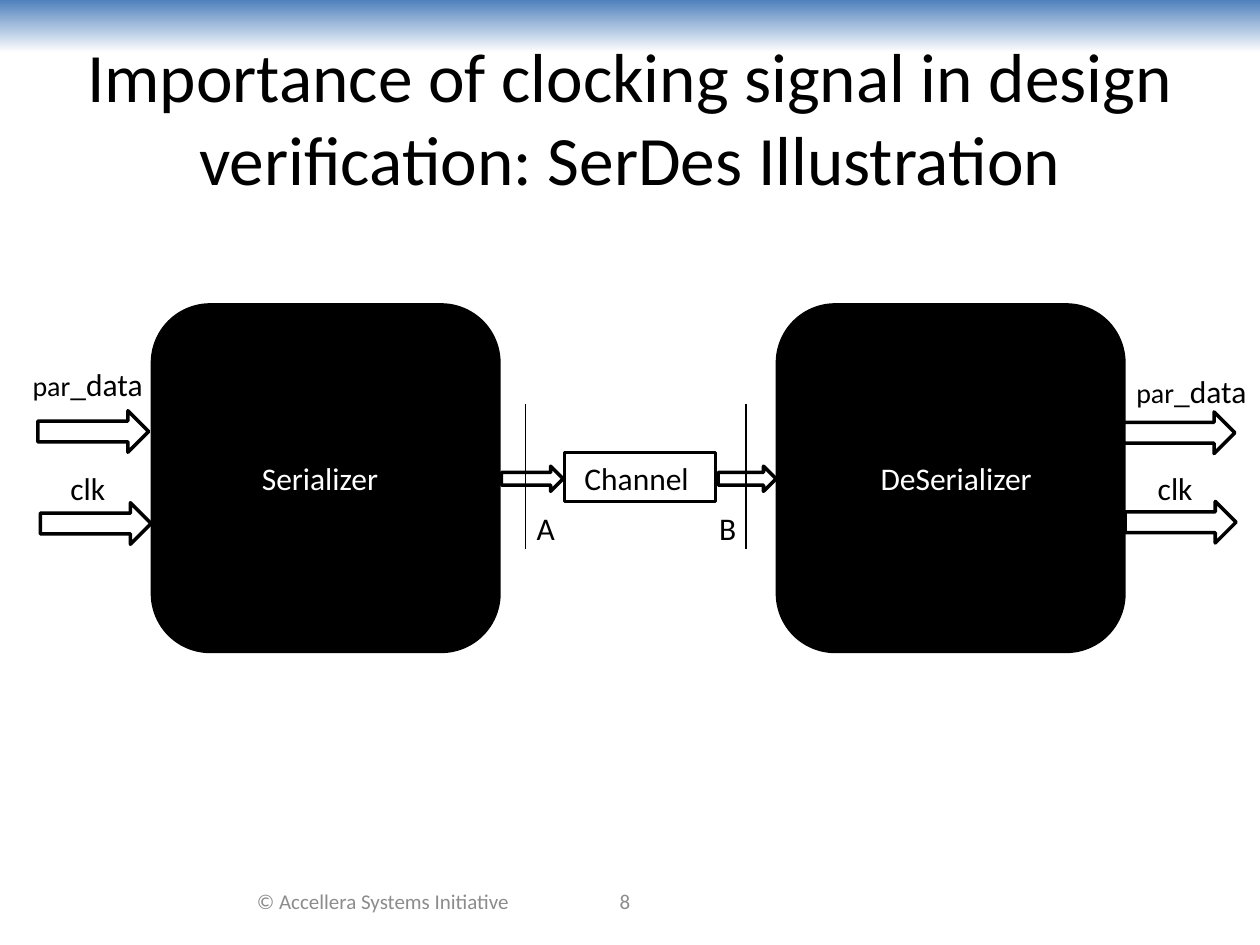
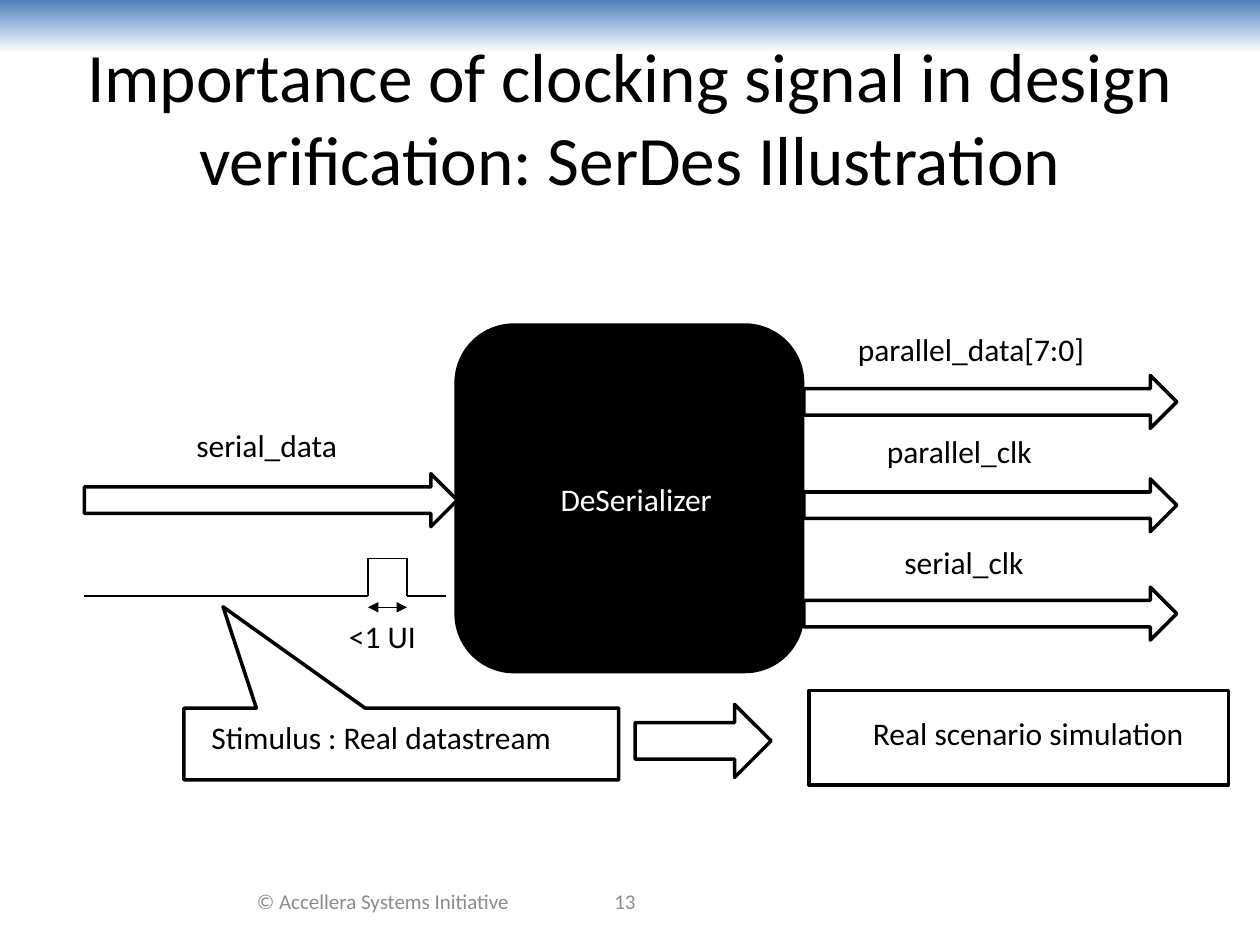
from dataclasses import dataclass
from itertools import pairwise
from typing import Any

from lxml import etree
from pptx import Presentation
from pptx import util as u
from pptx.dml.color import RGBColor
from pptx.enum import shapes, text
from pptx.oxml import ns

# Shared style
BLACK = RGBColor(0x00, 0x00, 0x00)
WHITE = RGBColor(0xFF, 0xFF, 0xFF)
BLUE = RGBColor(0x4F, 0x81, 0xBD)
GREY = RGBColor(0x8C, 0x8C, 0x8C)
FONT = "Calibri"
TITLE = "Importance of clocking signal in design verification: SerDes Illustration"
FOOTER = "© Accellera Systems Initiative"

# Grid: 100 columns by 75 rows
WIDTH, HEIGHT = u.Inches(10), u.Inches(7.5)
COLS, ROWS = 100, 75
SIDE = 27.5  # side of a black block
TALL = 4  # height of a label

RECT = shapes.MSO_SHAPE.RECTANGLE
ROUND = shapes.MSO_SHAPE.ROUNDED_RECTANGLE
ARROW = shapes.MSO_SHAPE.RIGHT_ARROW
CALL = shapes.MSO_SHAPE.RECTANGULAR_CALLOUT


@dataclass
class Form:
    kind: Any
    col: float
    row: float
    wide: float
    high: float
    fill: RGBColor = WHITE
    adj: tuple[float, ...] = ()


@dataclass
class Label:
    runs: str | list[tuple[str, float]]
    col: float
    row: float
    wide: float
    high: float = TALL
    size: float = 18
    color: RGBColor = BLACK
    mid: bool = False


@dataclass
class Rule:
    start: tuple[float, float]
    end: tuple[float, float]
    heads: bool = False


def col_x(col: float) -> int:
    return round(WIDTH * col / COLS)


def row_y(row: float) -> int:
    return round(HEIGHT * row / ROWS)


def format_all(item: Any, values: dict[str, Any]) -> None:
    for name, value in values.items():
        setattr(item, name, value)


def place(item: Form | Label) -> tuple[int, int, int, int]:
    return col_x(item.col), row_y(item.row), col_x(item.wide), row_y(item.high)


def draw_form(tree: Any, form: Form) -> Any:
    shape = tree.add_shape(form.kind, *place(form))
    shape.shadow.inherit = False
    shape.fill.solid()
    shape.fill.fore_color.rgb = form.fill
    shape.line.color.rgb = BLACK
    shape.line.width = u.Pt(2)
    for i, value in enumerate(form.adj):
        shape.adjustments[i] = value
    return shape


def draw_label(tree: Any, label: Label) -> None:
    frame = tree.add_textbox(*place(label)).text_frame
    anchor = text.MSO_ANCHOR.MIDDLE if label.mid else text.MSO_ANCHOR.TOP
    format_all(frame, {"word_wrap": True, "vertical_anchor": anchor})
    para = frame.paragraphs[0]
    para.alignment = text.PP_ALIGN.CENTER if label.mid else text.PP_ALIGN.LEFT
    runs = [(label.runs, label.size)] if isinstance(label.runs, str) else label.runs
    for words, size in runs:
        run = para.add_run()
        run.text = words
        format_all(run.font, {"name": FONT, "size": u.Pt(size)})
        run.font.color.rgb = label.color


def draw_rule(tree: Any, rule: Rule) -> None:
    (x1, y1), (x2, y2) = rule.start, rule.end
    line = tree.add_connector(
        shapes.MSO_CONNECTOR.STRAIGHT, col_x(x1), row_y(y1), col_x(x2), row_y(y2))
    line.line.color.rgb = BLACK
    line.line.width = u.Pt(0.75)
    props = line._element.spPr
    if rule.heads:
        for end in ("a:headEnd", "a:tailEnd"):
            etree.SubElement(props.find(ns.qn("a:ln")), ns.qn(end), type="triangle")
    etree.SubElement(props, ns.qn("a:effectLst"))


def draw_all(tree: Any, items: list[Form | Label | Rule]) -> None:
    tools = {Form: draw_form, Label: draw_label, Rule: draw_rule}
    for item in items:
        tools[type(item)](tree, item)


def add_page(deck: Any, number: int) -> Any:
    """Add a slide with the band, title and footer."""
    tree = deck.slides.add_slide(deck.slide_layouts[6]).shapes
    band = draw_form(tree, Form(RECT, 0, 0, COLS, 4.2))
    band.line.fill.background()
    band.fill.gradient()
    band.fill.gradient_angle = 270
    for stop, color, spot in zip(band.fill.gradient_stops, (BLUE, WHITE), (0, 1)):
        stop.color.rgb = color
        stop.position = spot
    draw_all(tree, [
        Label(TITLE, 5, 3, 90, 12.5, 39.6, mid=True),
        Label(FOOTER, 18.3, 69.5, 24.2, TALL, 12, GREY, True),
        Label(str(number), 40, 69.5, 19.2, TALL, 12, GREY, True),
    ])
    return tree


def link_page(deck: Any) -> None:
    """Serializer, channel and deserializer."""
    tree = add_page(deck, 8)
    # Blocks
    for name, col, left, wide in (("Serializer", 12.1, 19.8, 12.1),
                                  ("DeSerializer", 61.7, 68.9, 14.8)):
        draw_all(tree, [Form(ROUND, col, 24.2, SIDE, SIDE, BLACK),
                        Label(name, left, 35.9, wide, color=WHITE)])
    # Ports
    data = [("par", 16), ("_data", 18)]
    for runs, left, top, wide, col, row in (
            (data, 1.6, 28.5, 10.8, 3, 32.6), ("clk", 4.6, 36.7, 5.4, 3.2, 39.9),
            (data, 89.2, 29, 10.8, 89.2, 32.7), ("clk", 90.9, 36.7, 5.4, 89.3, 39.8)):
        draw_all(tree, [Form(ARROW, col, row, 8.8, 3.3), Label(runs, left, top, wide)])
    # Channel
    draw_all(tree, [
        Form(RECT, 44.8, 35.9, 12, 3.9),
        Label("Channel", 45.4, 35.9, 10.4),
        Form(ARROW, 39.8, 37, 4.9, 2),
        Form(ARROW, 57, 37, 4.6, 2),
    ])
    # Probe points
    for name, col, left in (("A", 41.7, 41.6), ("B", 59.2, 56.1)):
        draw_all(tree, [Rule((col, 32.1), (col, 43.6)), Label(name, left, 39.9, 2.5)])


def test_page(deck: Any) -> None:
    """Deserializer fed with a real data stream."""
    tree = add_page(deck, 13)
    # Block
    draw_all(tree, [Form(ROUND, 36.2, 25.8, SIDE, SIDE, BLACK),
                    Label("DeSerializer", 43.5, 37.6, 14.8, color=WHITE)])
    # Signals
    for name, col, row, left, top, wide in (
            ("parallel_data[7:0]", 63.8, 29.8, 67.1, 25.7, 20.4),
            ("parallel_clk", 63.8, 38, 69.4, 33.8, 13.8),
            ("serial_clk", 63.8, 46.6, 70.8, 42.6, 13),
            ("serial_data", 6.7, 37.6, 14.6, 33.3, 13.7)):
        draw_all(tree, [Form(ARROW, col, row, 29.6, 4.2), Label(name, left, top, wide)])
    # Stimulus and outcome
    draw_all(tree, [
        Form(CALL, 14.6, 56.2, 34.5, 5.7, adj=(-0.41, -1.91)),
        Label("Stimulus : Real datastream", 15.8, 56.5, 30),
        Form(ARROW, 50.4, 55.9, 10.8, 5.8),
        Form(RECT, 64.2, 54.8, 33.3, 7.5),
        Label("Real scenario simulation", 68.3, 56.2, 27.5),
    ])
    # Pulse
    rise, fall, low, high = 29.2, 32.3, 47.3, 44.3
    wave = [(6.7, low), (rise, low), (rise, high), (fall, high), (fall, low), (35.4, low)]
    pulse = tree.add_group_shape().shapes
    draw_all(pulse, [Rule(a, b) for a, b in pairwise(wave)])
    draw_all(pulse, [Rule((rise, 48.2), (fall, 48.2), True),
                     Label("<1 UI", 26.7, 48.5, 7.8)])


def main() -> None:
    deck = Presentation()
    format_all(deck, {"slide_width": WIDTH, "slide_height": HEIGHT})
    link_page(deck)
    test_page(deck)
    deck.save("out.pptx")


if __name__ == "__main__":
    main()
